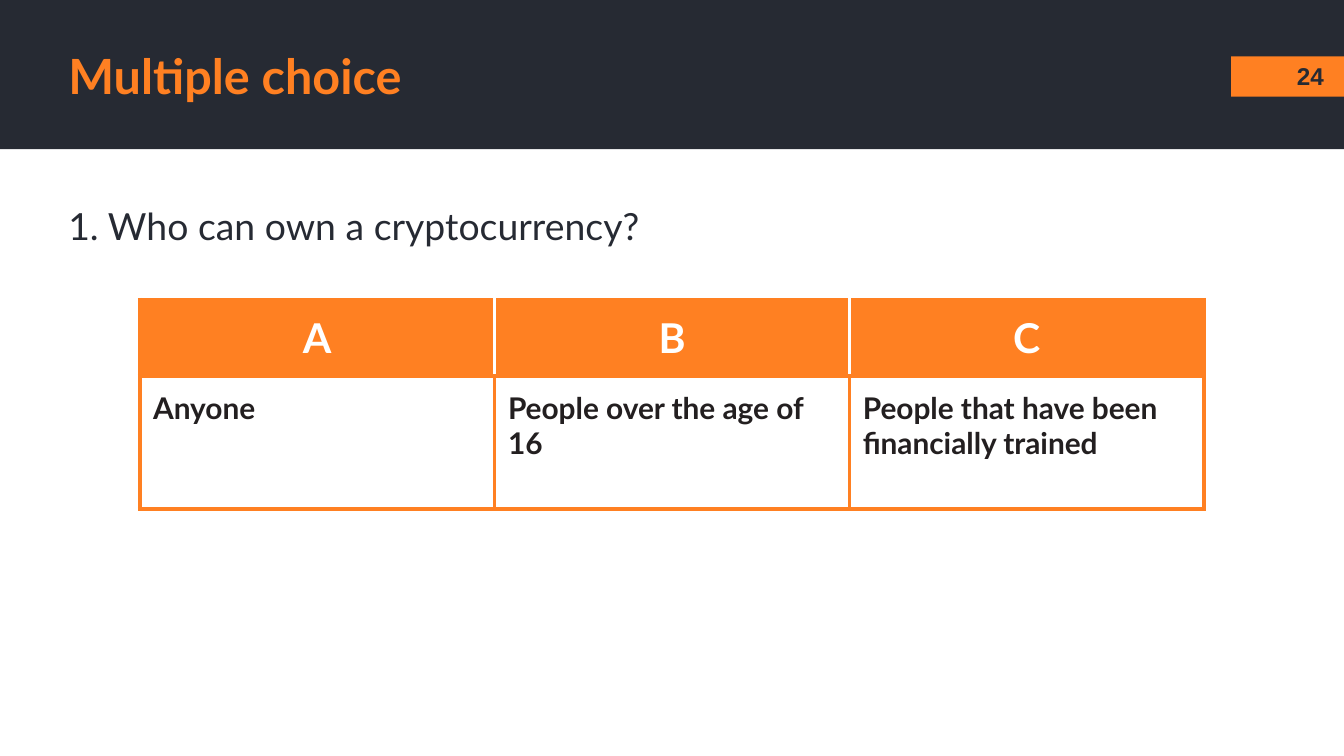
from dataclasses import dataclass

from lxml.etree import SubElement
from pptx import Presentation
from pptx.dml.color import RGBColor
from pptx.enum.shapes import MSO_SHAPE
from pptx.enum.text import MSO_ANCHOR as Anchor, PP_ALIGN as Align
from pptx.oxml.ns import qn
from pptx.util import Inches, Pt


@dataclass(frozen=True)
class Theme:
    """Colours, fonts and type sizes."""
    dark: str = "262A33"
    orange: str = "FF8022"
    white: str = "FFFFFF"
    ink: str = "231F20"
    font: str = "Lato"
    number_font: str = "Arial"
    title: int = 26
    question: int = 20
    header: int = 22
    answer: int = 16
    number: int = 13
    border: float = 2.25


T = Theme()


def rgb(color):
    """Turn a hex string into a colour."""
    return RGBColor.from_string(color)


def add_bar(s, x, y, w, h, color):
    """Add a plain filled rectangle."""
    sp = s.shapes.add_shape(MSO_SHAPE.RECTANGLE, Inches(x), Inches(y), Inches(w), Inches(h))
    sp.shadow.inherit = False
    sp.fill.solid()
    sp.fill.fore_color.rgb = rgb(color)
    sp.line.fill.background()


def set_text(tf, text, size, color, bold=False, font=T.font, align=Align.LEFT):
    """Write one styled paragraph."""
    tf.text = text
    p = tf.paragraphs[0]
    p.alignment = align
    f = p.runs[0].font
    f.name, f.size, f.bold = font, Pt(size), bold
    f.color.rgb = rgb(color)


def add_text(s, x, y, w, h, text, size, color, anchor=Anchor.MIDDLE, **style):
    """Add a wrapped text box with even insets."""
    tf = s.shapes.add_textbox(Inches(x), Inches(y), Inches(w), Inches(h)).text_frame
    tf.word_wrap = True
    tf.vertical_anchor = anchor
    tf.margin_left = tf.margin_right = tf.margin_top = tf.margin_bottom = Inches(0.1)
    set_text(tf, text, size, color, **style)


def add_borders(cell, left, right):
    """Draw cell borders, with orange above and below."""
    tc_pr = cell._tc.get_or_add_tcPr()
    colors = {"lnL": left, "lnR": right, "lnT": T.orange, "lnB": T.orange}
    for tag, color in colors.items():
        ln = SubElement(tc_pr, qn(f"a:{tag}"), w=str(Pt(T.border)))
        SubElement(SubElement(ln, qn("a:solidFill")), qn("a:srgbClr"), val=color)


def add_choices(s, x, y, col_w, row_heights, choices):
    """Add a table with a letter above each answer."""
    n = len(choices)
    frame = s.shapes.add_table(2, n, Inches(x), Inches(y), Inches(col_w * n), Inches(sum(row_heights)))
    table = frame.table
    for row, h in zip(table.rows, row_heights):
        row.height = Inches(h)
    for c, choice in enumerate(choices):
        table.columns[c].width = Inches(col_w)
        for r, text in enumerate(choice):
            is_header = r == 0
            cell = table.cell(r, c)
            inner = T.white if is_header else T.orange
            add_borders(cell, inner if c > 0 else T.orange, inner if c < n - 1 else T.orange)
            cell.fill.solid()
            cell.fill.fore_color.rgb = rgb(T.orange if is_header else T.white)
            cell.margin_left = cell.margin_right = cell.margin_top = cell.margin_bottom = Inches(0.1)
            if is_header:
                set_text(cell.text_frame, text, T.header, T.white, bold=True, align=Align.CENTER)
            else:
                set_text(cell.text_frame, text, T.answer, T.ink, bold=True)


def main():
    """Build and save the slide."""
    prs = Presentation()
    prs.slide_width = Inches(10)
    prs.slide_height = prs.slide_width * 9 // 16
    s = prs.slides.add_slide(prs.slide_layouts[6])
    add_bar(s, 0, 0, 10, 1.11, T.dark)
    add_bar(s, 9.16, 0.42, 0.84, 0.3, T.orange)
    add_text(s, 0.41, 1.41, 8.38, 1.28, "1. Who can own a cryptocurrency?",
             T.question, T.dark, anchor=Anchor.TOP)
    add_text(s, 0.41, 0.28, 8.74, 0.56, "Multiple choice", T.title, T.orange, bold=True)
    add_choices(s, 1.04, 2.23, 2.64, (0.57, 0.99), [
        ("A", "Anyone"),
        ("B", "People over the age of 16"),
        ("C", "People that have been financially trained"),
    ])
    add_text(s, 9.49, 0.44, 0.52, 0.25, "24", T.number, T.dark,
             bold=True, font=T.number_font, align=Align.CENTER)
    prs.save("out.pptx")


if __name__ == "__main__":
    main()
